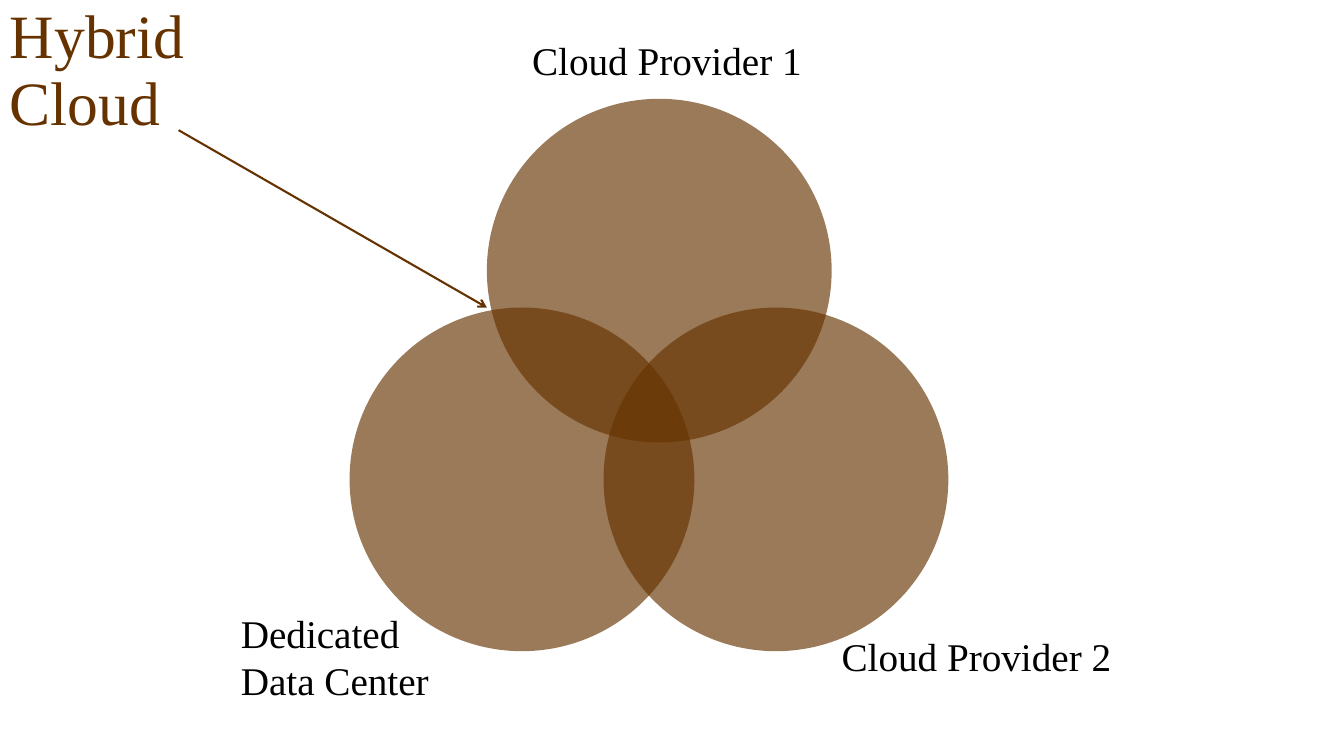
from lxml import etree
from pptx import Presentation
from pptx.dml.color import RGBColor
from pptx.enum.shapes import MSO_CONNECTOR, MSO_SHAPE
from pptx.enum.text import MSO_ANCHOR
from pptx.oxml.ns import qn
from pptx.util import Cm, Pt

BROWN = "663300"
BLACK = "000000"


def rgb(color):
    return RGBColor.from_string(color)


def add_text(text, x, y, w, h, size=28, color=BLACK, anchor=MSO_ANCHOR.TOP, spacing=1.0):
    tf = s.shapes.add_textbox(Cm(x), Cm(y), Cm(w), Cm(h)).text_frame
    tf.word_wrap = True
    tf.vertical_anchor = anchor
    for i, line in enumerate(text.split("\n")):
        p = tf.paragraphs[0] if i == 0 else tf.add_paragraph()
        p.line_spacing = spacing
        r = p.add_run()
        r.text = line
        r.font.name = "Times New Roman"
        r.font.size = Pt(size)
        r.font.color.rgb = rgb(color)


prs = Presentation()
prs.slide_width = Cm(33.87)
prs.slide_height = Cm(19.05)
s = prs.slides.add_slide(prs.slide_layouts[6])

add_text("Hybrid Cloud", 0, 0, 7.62, 3.63, size=44, color=BROWN,
         anchor=MSO_ANCHOR.MIDDLE, spacing=0.9)

for x, y in [(12.27, 2.49), (8.81, 7.75), (15.21, 7.75)]:
    sp = s.shapes.add_shape(MSO_SHAPE.OVAL, Cm(x), Cm(y), Cm(8.69), Cm(8.66))
    sp.shadow.inherit = False
    sp.fill.solid()
    sp.fill.fore_color.rgb = rgb(BROWN)
    sp.line.fill.background()
    fill_color = sp.fill._xPr.find(qn("a:solidFill"))[0]
    etree.SubElement(fill_color, qn("a:alpha"), val="65000")

for text, x, y, h in [
    ("Cloud Provider 1", 13.16, 0.79, 1.45),
    ("Cloud Provider 2", 20.96, 15.82, 1.45),
    ("Dedicated\nData Center", 5.82, 15.24, 2.64),
]:
    add_text(text, x, y, 7.54, h)

arrow = s.shapes.add_connector(MSO_CONNECTOR.STRAIGHT, Cm(4.5), Cm(3.28), Cm(12.27), Cm(7.75))
arrow.line.color.rgb = rgb(BROWN)
arrow.line.width = Pt(1.5)
etree.SubElement(arrow.line._get_or_add_ln(), qn("a:tailEnd"), type="arrow")
etree.SubElement(arrow._element.spPr, qn("a:effectLst"))

prs.save("out.pptx")
